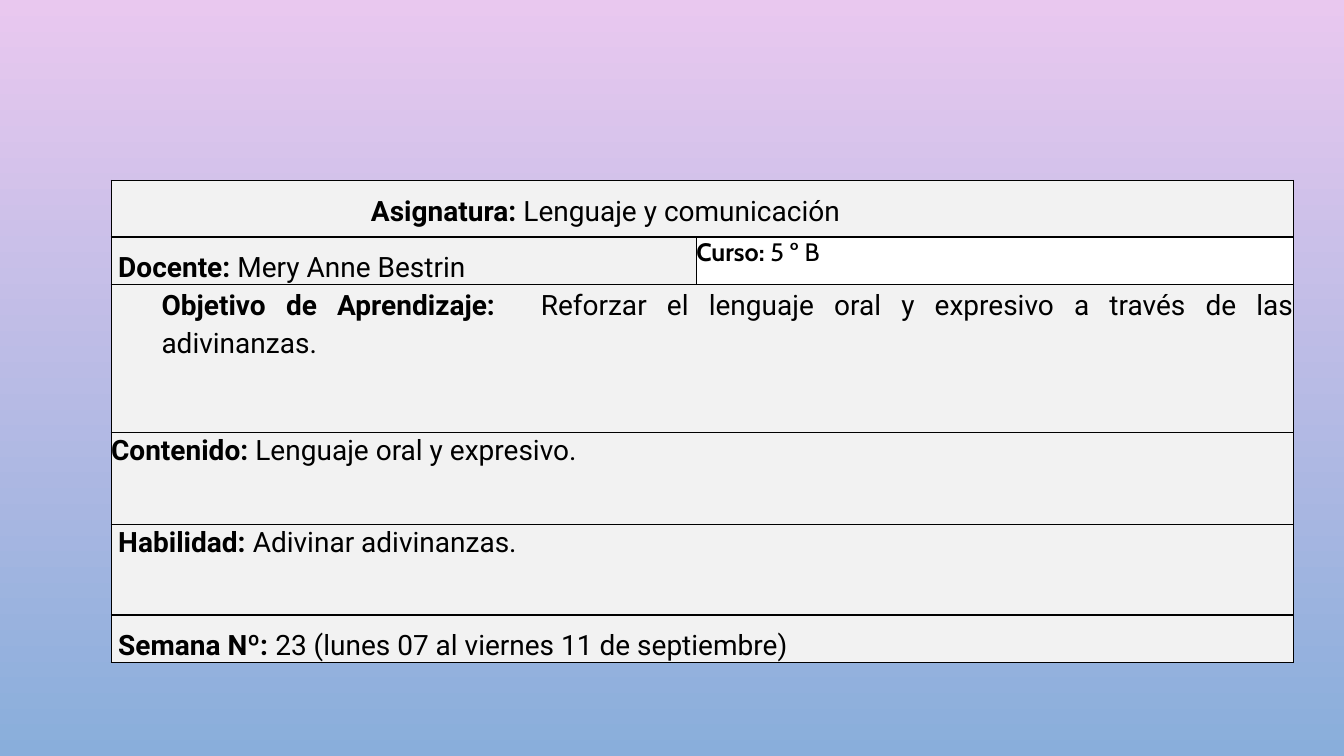
from lxml import etree
from pptx import Presentation
from pptx.dml.color import RGBColor
from pptx.enum.text import PP_ALIGN as Align
from pptx.oxml import parse_xml
from pptx.oxml.ns import nsdecls, qn
from pptx.util import Cm, Pt

BLACK, GREY, WHITE = "000000", "F2F2F2", "FFFFFF"
COLUMN_WIDTHS = (14.75, 15.05)
ROW_HEIGHTS = (1.42, 1.16, 3.73, 2.32, 2.28, 1.15)
FIXED_LINE = Pt(16.9)
LOWERED = 0.6  # one fixed line above the text
SMALL_INDENT = 0.18


def color(hex_text):
    return RGBColor.from_string(hex_text)


def paint_background(page, top, bottom):
    fill = page.background.fill
    fill.gradient()
    fill.gradient_angle = 270
    for stop, position, shade in zip(fill.gradient_stops, (0, 1), (top, bottom)):
        stop.position = position
        stop.color.rgb = color(shade)


def style_cell(cell, shade):
    """Border, fill and zero margins."""
    properties = cell._tc.get_or_add_tcPr()
    for side in ("lnL", "lnR", "lnT", "lnB"):
        line = parse_xml(f'<a:{side} {nsdecls("a")} w="{Pt(1)}"/>')
        solid = etree.SubElement(line, qn("a:solidFill"))
        etree.SubElement(solid, qn("a:srgbClr"), val=BLACK)
        properties.append(line)
    cell.fill.solid()
    cell.fill.fore_color.rgb = color(shade)
    cell.margin_left = cell.margin_right = cell.margin_top = cell.margin_bottom = 0


def write_entry(cell, label, value, size=20, font="Roboto", align=Align.LEFT,
                indent=0, spacing=1.0, top=0, right=0):
    """Bold label followed by a plain value."""
    cell.margin_top = Cm(top)
    cell.margin_right = Cm(right)
    para = cell.text_frame.paragraphs[0]
    para.text = label
    para.add_run().text = value
    para.alignment = align
    para.line_spacing = spacing
    properties = para._p.get_or_add_pPr()
    properties.set("marL", str(Cm(indent)))
    properties.set("indent", "0")
    for span, bold in zip(para.runs, (True, False)):
        span.font.name = font
        span.font.size = Pt(size)
        span.font.bold = bold
        span.font.color.rgb = color(BLACK)


def add_lesson_table(page):
    frame = page.shapes.add_table(
        len(ROW_HEIGHTS), len(COLUMN_WIDTHS), Cm(2.8), Cm(4.55),
        Cm(sum(COLUMN_WIDTHS)), Cm(sum(ROW_HEIGHTS)))
    table = frame.table
    table.first_row = table.horz_banding = False
    for column, width in zip(table.columns, COLUMN_WIDTHS):
        column.width = Cm(width)
    for row, height in zip(table.rows, ROW_HEIGHTS):
        row.height = Cm(height)
    for cell in table.iter_cells():
        style_cell(cell, GREY)
    for row in (0, 2, 3, 4, 5):
        table.cell(row, 0).merge(table.cell(row, 1))
    return table


def main():
    deck = Presentation()
    deck.slide_width, deck.slide_height = Cm(33.87), Cm(19.05)
    page = deck.slides.add_slide(deck.slide_layouts[6])
    paint_background(page, "E9C8EF", "89AEDB")

    table = add_lesson_table(page)
    write_entry(table.cell(0, 0), "Asignatura: ", "Lenguaje y comunicación",
                align=Align.CENTER, spacing=FIXED_LINE, top=LOWERED, right=4.88)
    write_entry(table.cell(1, 0), "Docente: ", "Mery Anne Bestrin",
                indent=SMALL_INDENT, spacing=FIXED_LINE, top=LOWERED)
    course = table.cell(1, 1)
    course.fill.fore_color.rgb = color(WHITE)
    write_entry(course, "Curso: ", "5 º B", size=18, font="Cabin")
    write_entry(table.cell(2, 0), "Objetivo de Aprendizaje:\t",
                "Reforzar el lenguaje oral y expresivo a través de las adivinanzas.",
                align=Align.JUSTIFY, indent=1.27, spacing=1.15)
    write_entry(table.cell(3, 0), "Contenido: ", "Lenguaje oral y expresivo.",
                spacing=1.05)
    write_entry(table.cell(4, 0), "Habilidad: ", "Adivinar adivinanzas.",
                indent=SMALL_INDENT, spacing=1.05)
    write_entry(table.cell(5, 0), "Semana Nº: ",
                "23 (lunes 07 al viernes 11 de septiembre)",
                indent=SMALL_INDENT, spacing=FIXED_LINE, top=LOWERED)
    deck.save("out.pptx")


if __name__ == "__main__":
    main()
